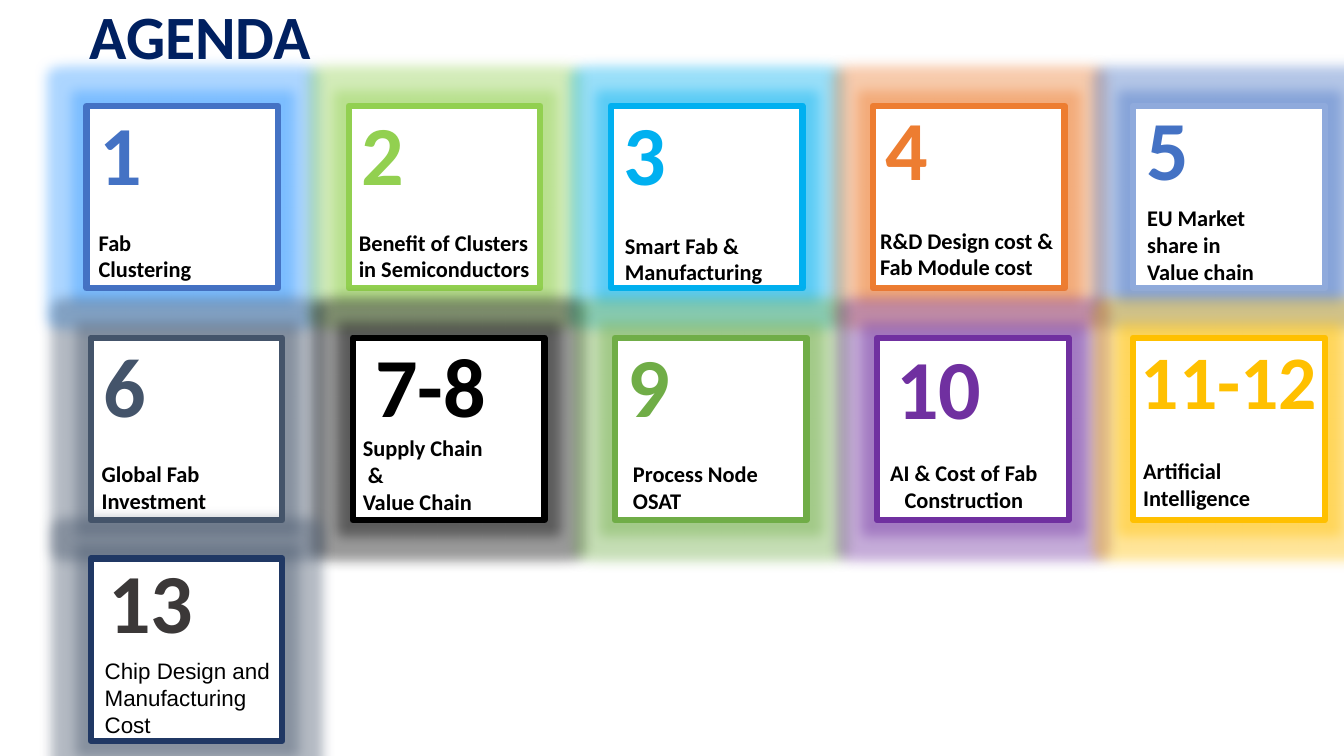
from lxml.etree import SubElement
from pptx import Presentation
from pptx.dml.color import RGBColor
from pptx.enum.shapes import MSO_SHAPE
from pptx.enum.text import MSO_ANCHOR, MSO_AUTO_SIZE, PP_ALIGN
from pptx.oxml.ns import qn
from pptx.util import Inches, Pt

NAVY = RGBColor(0x00, 0x20, 0x60)
WHITE = RGBColor(0xFF, 0xFF, 0xFF)
BLACK = RGBColor(0x00, 0x00, 0x00)
BLUE = RGBColor(0x44, 0x72, 0xC4)
AZURE = RGBColor(0x33, 0x99, 0xFF)
LIME = RGBColor(0x92, 0xD0, 0x50)
CYAN = RGBColor(0x00, 0xB0, 0xF0)
ORANGE = RGBColor(0xED, 0x7D, 0x31)
PALE = RGBColor(0x8F, 0xAA, 0xDC)
SLATE = RGBColor(0x44, 0x54, 0x6A)
GREEN = RGBColor(0x70, 0xAD, 0x47)
PURPLE = RGBColor(0x70, 0x30, 0xA0)
GOLD = RGBColor(0xFF, 0xC0, 0x00)
DEEP = RGBColor(0x20, 0x38, 0x64)
GREY = RGBColor(0x3B, 0x38, 0x38)

LEFT, STEP, LAST = 0.86, 2.6, 11.24
TOPS = (1.05, 3.35, 5.54)
WIDE, HIGH = 1.9, 1.81
LEAD, MID = PP_ALIGN.LEFT, PP_ALIGN.CENTER
BOLD = {"name": "Calibri", "bold": True}
PLAIN = {"name": "Arial", "bold": False}

# column, row, line colour, glow colour,
# number (text, colour, size, x, y, width from the card corner),
# caption (text, font, alignment, x, y, width, height from the card corner)
CARDS = [
    (0, 0, BLUE, AZURE, ("1", BLUE, 60, 0, -0.09, 0.67),
     ("Fab Clustering", BOLD, LEAD, 0.02, 1.17, 1.46, 0.9)),
    (1, 0, LIME, LIME, ("2", LIME, 60, 0, -0.09, 0.67),
     ("Benefit of Clusters\nin Semiconductors", BOLD, LEAD, 0, 1.17, 2.22, 0.87)),
    (2, 0, CYAN, CYAN, ("3", CYAN, 60, 0, -0.09, 0.67),
     ("Smart Fab & Manufacturing", BOLD, LEAD, 0.04, 1.2, 1.9, 0.64)),
    (3, 0, ORANGE, ORANGE, ("4", ORANGE, 60, 0, -0.14, 0.67),
     ("R&D Design cost &\nFab Module cost", BOLD, LEAD, -0.03, 1.15, 2.33, 0.64)),
    (4, 0, PALE, BLUE, ("5", BLUE, 60, 0.01, -0.14, 0.67),
     ("EU Market share in Value chain", BOLD, LEAD, 0.04, 0.93, 1.38, 0.91)),
    (0, 1, SLATE, SLATE, ("6", SLATE, 60, 0, -0.09, 0.67),
     ("Global Fab Investment", BOLD, LEAD, 0.01, 1.17, 1.46, 0.63)),
    (1, 1, BLACK, BLACK, ("7-8", BLACK, 60, -0.17, -0.09, 1.88),
     ("Supply Chain\n &\nValue Chain", BOLD, LEAD, 0, 0.91, 2.22, 0.91)),
    (2, 1, GREEN, GREEN, ("9", GREEN, 60, 0, -0.09, 0.67),
     ("Process Node\nOSAT", BOLD, LEAD, 0.08, 1.17, 1.63, 1.14)),
    (3, 1, PURPLE, PURPLE, ("10", PURPLE, 60, -0.53, -0.07, 2.28),
     ("AI & Cost of Fab Construction", BOLD, MID, -0.14, 1.16, 2, 0.91)),
    (4, 1, GOLD, GOLD, ("11-12", GOLD, 54, -0.19, -0.09, 2.28),
     ("Artificial\nIntelligence", BOLD, LEAD, 0, 1.14, 1.38, 0.63)),
    (0, 2, DEEP, SLATE, ("13", GREY, 60, -0.51, -0.14, 2.21),
     ("Chip Design and Manufacturing Cost", PLAIN, LEAD, 0.04, 0.93, 1.93, 0.91)),
]


def write(shape, text, size, tint, align, face):
    frame = shape.text_frame
    frame.text = text
    frame.word_wrap = True
    frame.vertical_anchor = MSO_ANCHOR.TOP
    frame.auto_size = MSO_AUTO_SIZE.SHAPE_TO_FIT_TEXT
    for para in frame.paragraphs:
        para.alignment = align
        for run in para.runs:
            run.font.color.rgb = tint
            for key, value in {"size": Pt(size), **face}.items():
                setattr(run.font, key, value)


def shine(shape, tint):
    """Give the shape a soft, half-clear glow."""
    shape.shadow.inherit = False
    effects = shape._element.spPr.find(qn("a:effectLst"))
    glow = SubElement(effects, qn("a:glow"), rad=str(Pt(18)))
    color = SubElement(glow, qn("a:srgbClr"), val=str(tint))
    SubElement(color, qn("a:alpha"), val="40000")


deck = Presentation()
deck.slide_width, deck.slide_height = Inches(13.33), Inches(7.5)
slide = deck.slides.add_slide(deck.slide_layouts[5])

title = slide.shapes.title
place = {"left": 0.5, "top": -0.07, "width": 2.97, "height": 0.84}
for key, value in place.items():
    setattr(title, key, Inches(value))
write(title, "AGENDA", 44, NAVY, MID, BOLD)

for col, row, edge, halo, number, label in CARDS:
    x = min(LEFT + STEP * col + (0.04 if row else 0), LAST)
    y = TOPS[row]
    card = slide.shapes.add_shape(
        MSO_SHAPE.RECTANGLE, Inches(x), Inches(y), Inches(WIDE), Inches(HIGH))
    card.fill.solid()
    card.fill.fore_color.rgb = WHITE
    card.line.color.rgb = edge
    card.line.width = Pt(4.5)
    shine(card, halo)

    text, tint, size, dx, dy, wide = number
    box = slide.shapes.add_textbox(
        Inches(x + dx), Inches(y + dy), Inches(wide), Inches(1.1))
    write(box, text, size, tint, MID, BOLD)

    text, face, align, dx, dy, wide, high = label
    box = slide.shapes.add_textbox(
        Inches(x + dx), Inches(y + dy), Inches(wide), Inches(high))
    write(box, text, 16, BLACK, align, face)

deck.save("out.pptx")
